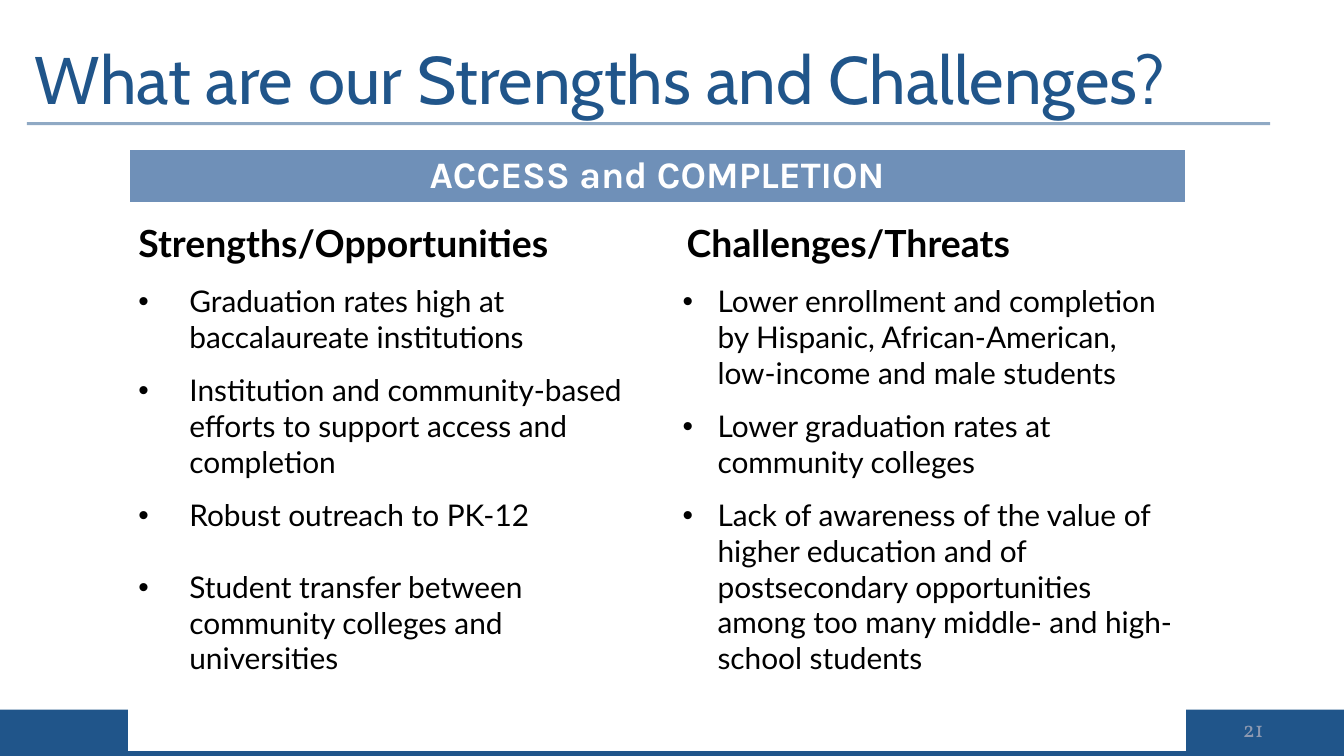
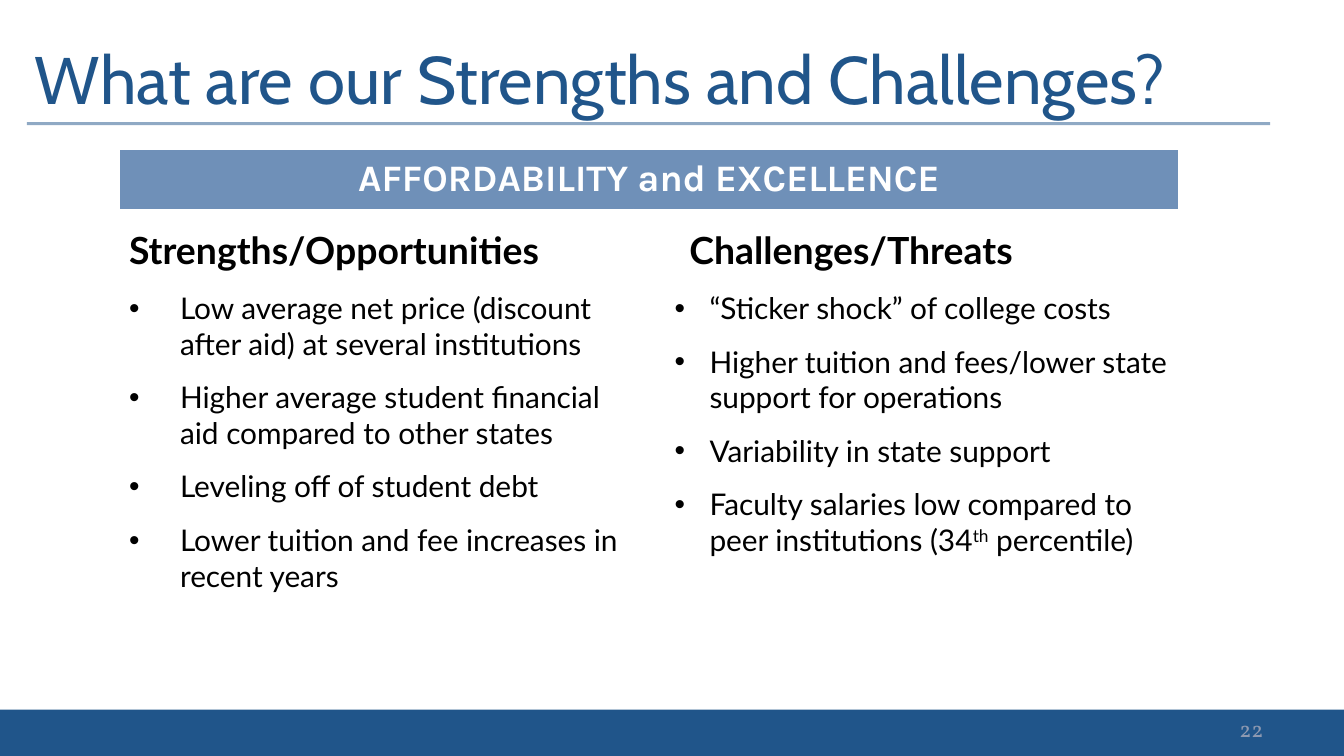
from dataclasses import dataclass

from lxml import etree
from pptx import Presentation, util as u
from pptx.dml.color import RGBColor
from pptx.enum import shapes, text
from pptx.oxml.ns import qn

NAVY = RGBColor(0x20, 0x55, 0x8A)
STEEL = RGBColor(0x6F, 0x90, 0xB8)
GREY = RGBColor(0x8D, 0x99, 0xB1)
WHITE = RGBColor(0xFF, 0xFF, 0xFF)
BLACK = RGBColor(0, 0, 0)

TITLE = "What are our Strengths and Challenges?"
SLIDE_WIDTH = u.Inches(10)
GRID_COLUMNS = 100
SLIDE_ROWS = 56.25
TABLE_TOP = 11.1
CELL_SIDE = 0.7
HEADING_TOP = 1.3
BULLET_GAP = 9.6


def grid(units: float) -> u.Emu:
    """Length of a number of square grid units, 100 across the slide."""
    return u.Emu(round(units * SLIDE_WIDTH / GRID_COLUMNS))


@dataclass(frozen=True)
class Bullet:
    words: str
    gap: float = BULLET_GAP


@dataclass(frozen=True)
class Column:
    heading: str
    width: float
    bullets: list[Bullet]
    margin: float
    hanging: float
    heading_margin: float = 0


@dataclass(frozen=True)
class Topic:
    number: int
    name: str
    left: float
    rows: tuple[float, float]
    columns: tuple[Column, Column]


def strengths(width: float, bullets: list[Bullet]) -> Column:
    return Column("Strengths/Opportunities", width, bullets, 3.8, 3.8)


def challenges(width: float, heading_margin: float, bullets: list[Bullet]) -> Column:
    return Column("Challenges/Threats", width, bullets, 5, 2.6, heading_margin)


TOPICS = [
    Topic(21, "ACCESS and COMPLETION", 9.6, (4, 40.7), (
        strengths(38.1, [
            Bullet("Graduation rates high at baccalaureate institutions"),
            Bullet("Institution and community-based efforts to support access and completion"),
            Bullet("Robust outreach to PK-12"),
            Bullet("Student transfer between community colleges and universities", 2 * BULLET_GAP),
        ]),
        challenges(40.5, 2.7, [
            Bullet("Lower enrollment and completion by Hispanic, African-American, "
                   "low-income and male students"),
            Bullet("Lower graduation rates at community colleges"),
            Bullet("Lack of awareness of the value of higher education and of postsecondary "
                   "opportunities among too many middle- and high-school students"),
        ]),
    )),
    Topic(22, "AFFORDABILITY and EXCELLENCE", 8.9, (4.5, 30.6), (
        strengths(38.2, [
            Bullet("Low average net price (discount after aid) at several institutions"),
            Bullet("Higher average student financial aid compared to other states"),
            Bullet("Leveling off of student debt"),
            Bullet("Lower tuition and fee increases in recent years"),
        ]),
        challenges(40.6, 3.5, [
            Bullet("“Sticker shock” of college costs"),
            Bullet("Higher tuition and fees/lower state support for operations"),
            Bullet("Variability in state support"),
            Bullet("Faculty salaries low compared to peer institutions (34^th^ percentile)"),
        ]),
    )),
]


def write(para, words: str, *, size: float, font: str, color: RGBColor,
          bold: bool = False, align=None) -> None:
    """Add formatted text; parts between carets become superscript."""
    para.alignment = align
    for index, part in enumerate(words.split("^")):
        span = para.add_run()
        span.text = part
        span.font.size = u.Pt(size)
        span.font.name = font
        span.font.bold = bold
        span.font.color.rgb = color
        if index % 2:
            span._r.get_or_add_rPr().set("baseline", "30000")


def indent(para, margin: float, hanging: float = 0) -> None:
    properties = para._p.get_or_add_pPr()
    properties.set("marL", str(grid(margin)))
    properties.set("indent", str(-grid(hanging)))


def add_bullet(para) -> None:
    properties = para._p.get_or_add_pPr()
    etree.SubElement(properties, qn("a:buFont")).set("typeface", "Arial")
    etree.SubElement(properties, qn("a:buChar")).set("char", "•")


def add_frame(page, number: int) -> None:
    """Draw the title, its rule, the bottom band and the page number."""
    title = page.shapes.title
    title.left, title.top, title.width, title.height = map(grid, (1.6, 2.4, 90.7, 6.7))
    title.text_frame.auto_size = text.MSO_AUTO_SIZE.NONE
    title.text_frame.vertical_anchor = text.MSO_ANCHOR.MIDDLE
    write(title.text_frame.paragraphs[0], TITLE, size=36, font="Cabin", color=NAVY,
          align=text.PP_ALIGN.LEFT)

    band = page.shapes.add_shape(shapes.MSO_SHAPE.RECTANGLE,
                                 *map(grid, (-0.1, 52.8, 100.1, 3.5)))
    band.shadow.inherit = False
    band.fill.solid()
    band.fill.fore_color.rgb = NAVY
    band.line.fill.background()

    rule = page.shapes.add_connector(shapes.MSO_CONNECTOR.STRAIGHT,
                                     *map(grid, (2, 9.2, 94.5, 9.2)))
    rule.line.color.rgb = NAVY
    rule.line.width = u.Pt(1.5)
    color = rule.line._ln.find(".//" + qn("a:srgbClr"))
    etree.SubElement(color, qn("a:alpha")).set("val", "50000")
    etree.SubElement(rule._element.spPr, qn("a:effectLst"))

    box = page.shapes.add_textbox(*map(grid, (71.7, 52.7, 23.3, 3)))
    box.text_frame.word_wrap = True
    box.text_frame.vertical_anchor = text.MSO_ANCHOR.MIDDLE
    write(box.text_frame.paragraphs[0], str(number), size=12, font="Vollkorn",
          color=GREY, align=text.PP_ALIGN.RIGHT)


def format_cell(cell, fill: RGBColor, top: float = 0) -> None:
    cell.margin_left = cell.margin_right = grid(CELL_SIDE)
    cell.margin_top = grid(top)
    cell.margin_bottom = 0
    cell.fill.solid()
    cell.fill.fore_color.rgb = fill


def fill_column(cell, column: Column) -> None:
    format_cell(cell, WHITE, HEADING_TOP)
    heading = cell.text_frame.paragraphs[0]
    indent(heading, column.heading_margin)
    write(heading, column.heading, size=20, font="Lato", color=BLACK, bold=True)
    for bullet in column.bullets:
        para = cell.text_frame.add_paragraph()
        indent(para, column.margin, column.hanging)
        add_bullet(para)
        para.space_before = u.Pt(bullet.gap)
        write(para, bullet.words, size=16, font="Lato", color=BLACK)


def add_topic_table(page, topic: Topic) -> None:
    width = sum(column.width for column in topic.columns)
    frame = page.shapes.add_table(2, 2, *map(grid, (topic.left, TABLE_TOP, width,
                                                    sum(topic.rows))))
    table = frame.table
    table.horz_banding = False
    for row, height in zip(table.rows, topic.rows):
        row.height = grid(height)
    header = table.cell(0, 0)
    header.merge(table.cell(0, 1))
    format_cell(header, STEEL)
    header.vertical_anchor = text.MSO_ANCHOR.MIDDLE
    write(header.text_frame.paragraphs[0], topic.name, size=20, font="Karla",
          color=WHITE, bold=True, align=text.PP_ALIGN.CENTER)
    for index, column in enumerate(topic.columns):
        table.columns[index].width = grid(column.width)
        fill_column(table.cell(1, index), column)


def main() -> None:
    deck = Presentation()
    deck.slide_width = SLIDE_WIDTH
    deck.slide_height = grid(SLIDE_ROWS)
    title_only = deck.slide_layouts.get_by_name("Title Only")
    for topic in TOPICS:
        page = deck.slides.add_slide(title_only)
        add_frame(page, topic.number)
        add_topic_table(page, topic)
    deck.save("out.pptx")


if __name__ == "__main__":
    main()
